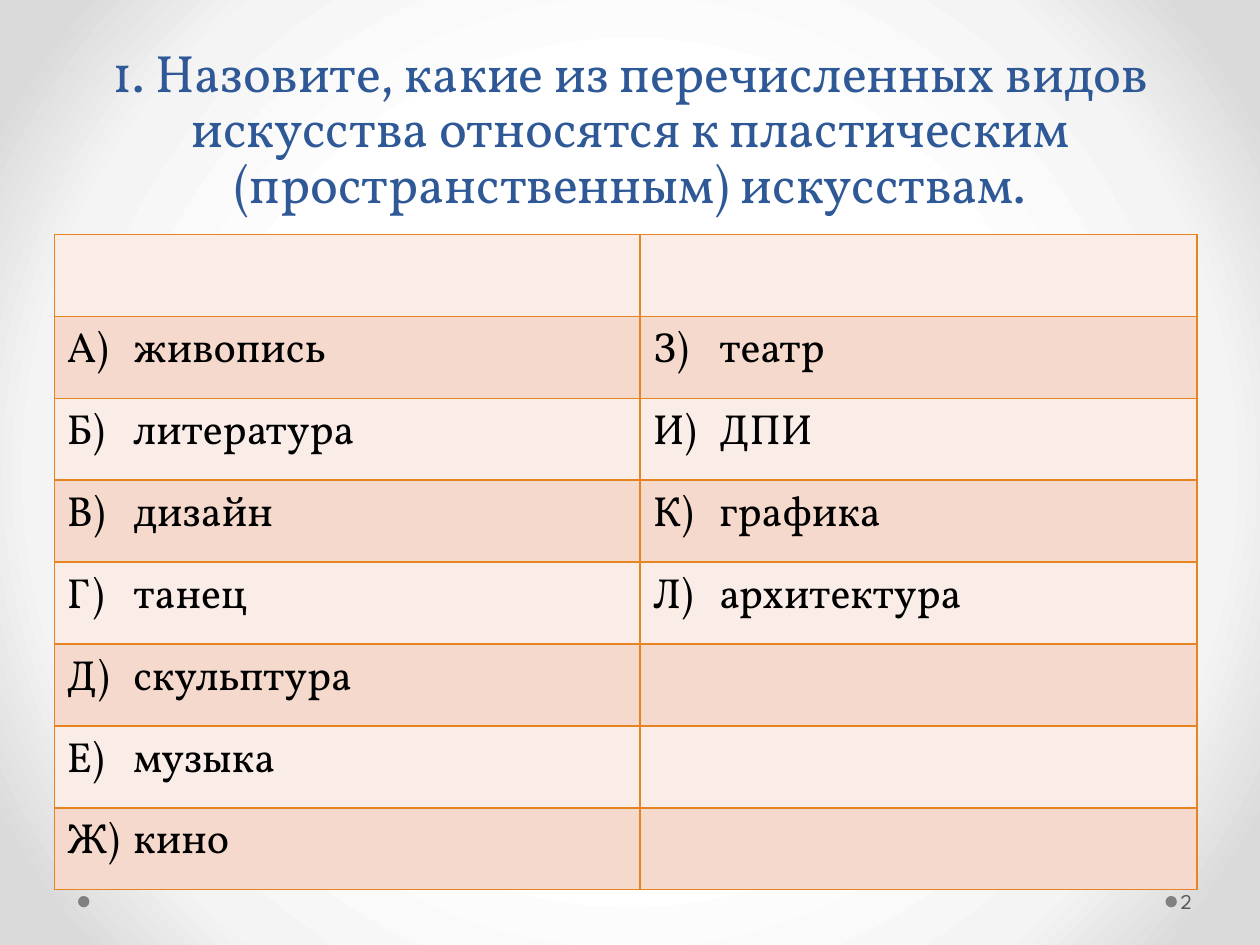
from lxml import etree
from pptx import Presentation
from pptx.dml.color import RGBColor
from pptx.enum.shapes import MSO_SHAPE
from pptx.enum.text import MSO_ANCHOR, MSO_AUTO_SIZE, PP_ALIGN
from pptx.oxml import parse_xml
from pptx.oxml.ns import nsdecls, qn
from pptx.util import Pt

OVAL = MSO_SHAPE.OVAL
CENTER = PP_ALIGN.CENTER
BOTTOM, MIDDLE = MSO_ANCHOR.BOTTOM, MSO_ANCHOR.MIDDLE
NO_AUTOFIT = MSO_AUTO_SIZE.NONE

# Content
TITLE = ("1. Назовите, какие из перечисленных видов искусства относятся "
         "к пластическим (пространственным) искусствам.")
ARTS = [
    ("", ""),
    ("А)\tживопись", "З)\tтеатр"),
    ("Б)\tлитература", "И)\tДПИ"),
    ("В)\tдизайн", "К)\tграфика"),
    ("Г)\tтанец", "Л)\tархитектура"),
    ("Д)\tскульптура", ""),
    ("Е)\tмузыка", ""),
    ("Ж)\tкино", ""),
]
PAGE_NUMBER = "2"

# Look and layout, in points
COLORS = {"title": "2F5897", "text": "000000", "border": "E68422",
          "light": "FAEDE8", "dark": "F5D9CD", "dot": "808080", "page": "595959"}
BACKGROUND_STOPS = [(50, "FFFFFF"), (76, "F4F4F4"), (92, "DADADA")]
SERIF, SANS = "Vollkorn", "League Spartan"
TABLE_LEFT, TABLE_TOP = 31, 134
COLUMN_WIDTHS = [334.8, 318.2]
ROW_HEIGHT = 46.8
WORD_TAB = 38
DOT_LEFTS, DOT_TOP, DOT_SIZE = [44.6, 666], 512, 6.5


def color(name):
    return RGBColor.from_string(COLORS[name])


def style(paragraph, font_name, size, color_name):
    for run in paragraph.runs:
        run.font.name = font_name
        run.font.size = Pt(size)
        run.font.color.rgb = color(color_name)


def add_tab_stop(paragraph, position):
    properties = paragraph._p.get_or_add_pPr()
    tabs = etree.SubElement(properties, qn("a:tabLst"))
    etree.SubElement(tabs, qn("a:tab"), pos=str(Pt(position)), algn="l")


def add_borders(cell):
    properties = cell._tc.get_or_add_tcPr()
    for position, side in enumerate(("lnL", "lnR", "lnT", "lnB")):
        properties.insert(position, parse_xml(
            f'<a:{side} {nsdecls("a")} w="{Pt(1)}"><a:solidFill>'
            f'<a:srgbClr val="{COLORS["border"]}"/></a:solidFill></a:{side}>'))


def set_background(slide):
    slide.background.fill.solid()
    properties = slide._element.cSld.find(qn("p:bg")).find(qn("p:bgPr"))
    stops = "".join(f'<a:gs pos="{percent * 1000}"><a:srgbClr val="{value}"/></a:gs>'
                    for percent, value in BACKGROUND_STOPS)
    gradient = parse_xml(
        f'<a:gradFill {nsdecls("a")} rotWithShape="1"><a:gsLst>{stops}</a:gsLst>'
        '<a:path path="circle"><a:fillToRect l="50000" t="50000" r="50000" b="50000"/>'
        '</a:path></a:gradFill>')
    properties.replace(properties.find(qn("a:solidFill")), gradient)


presentation = Presentation()
presentation.slide_width, presentation.slide_height = Pt(720), Pt(540)
slide = presentation.slides.add_slide(presentation.slide_layouts[5])
set_background(slide)

# Footer dots
for left in DOT_LEFTS:
    dot = slide.shapes.add_shape(OVAL, Pt(left), Pt(DOT_TOP), Pt(DOT_SIZE), Pt(DOT_SIZE))
    dot.shadow.inherit = False
    dot.fill.solid()
    dot.fill.fore_color.rgb = color("dot")
    dot.line.fill.background()

# Title
title = slide.shapes.title
title.left, title.top, title.width, title.height = Pt(36.7), Pt(21), Pt(647.3), Pt(105)
title_frame = title.text_frame
title_frame.text = TITLE
title_frame.word_wrap = True
title_frame.auto_size = NO_AUTOFIT
title_frame.vertical_anchor = BOTTOM
title_paragraph = title_frame.paragraphs[0]
title_paragraph.alignment = CENTER
title_paragraph.line_spacing = 0.88
style(title_paragraph, SERIF, 30, "title")

# Table of arts
table = slide.shapes.add_table(
    len(ARTS), len(COLUMN_WIDTHS), Pt(TABLE_LEFT), Pt(TABLE_TOP),
    Pt(sum(COLUMN_WIDTHS)), Pt(ROW_HEIGHT * len(ARTS))).table
table.first_row = False
for column, width in zip(table.columns, COLUMN_WIDTHS):
    column.width = Pt(width)
for row_index, row_texts in enumerate(ARTS):
    table.rows[row_index].height = Pt(ROW_HEIGHT)
    for column_index, text in enumerate(row_texts):
        cell = table.cell(row_index, column_index)
        cell.fill.solid()
        cell.fill.fore_color.rgb = color("dark" if row_index % 2 else "light")
        add_borders(cell)
        if text:
            cell.text_frame.text = text
            paragraph = cell.text_frame.paragraphs[0]
            add_tab_stop(paragraph, WORD_TAB)
            style(paragraph, SERIF, 24, "text")

# Page number
page_box = slide.shapes.add_textbox(Pt(672.5), Pt(500.4), Pt(44), Pt(28.8))
page_frame = page_box.text_frame
page_frame.text = PAGE_NUMBER
page_frame.word_wrap = True
page_frame.margin_left = Pt(2.2)
page_frame.margin_right = Pt(3.6)
page_frame.vertical_anchor = MIDDLE
style(page_frame.paragraphs[0], SANS, 12, "page")

presentation.save("out.pptx")
